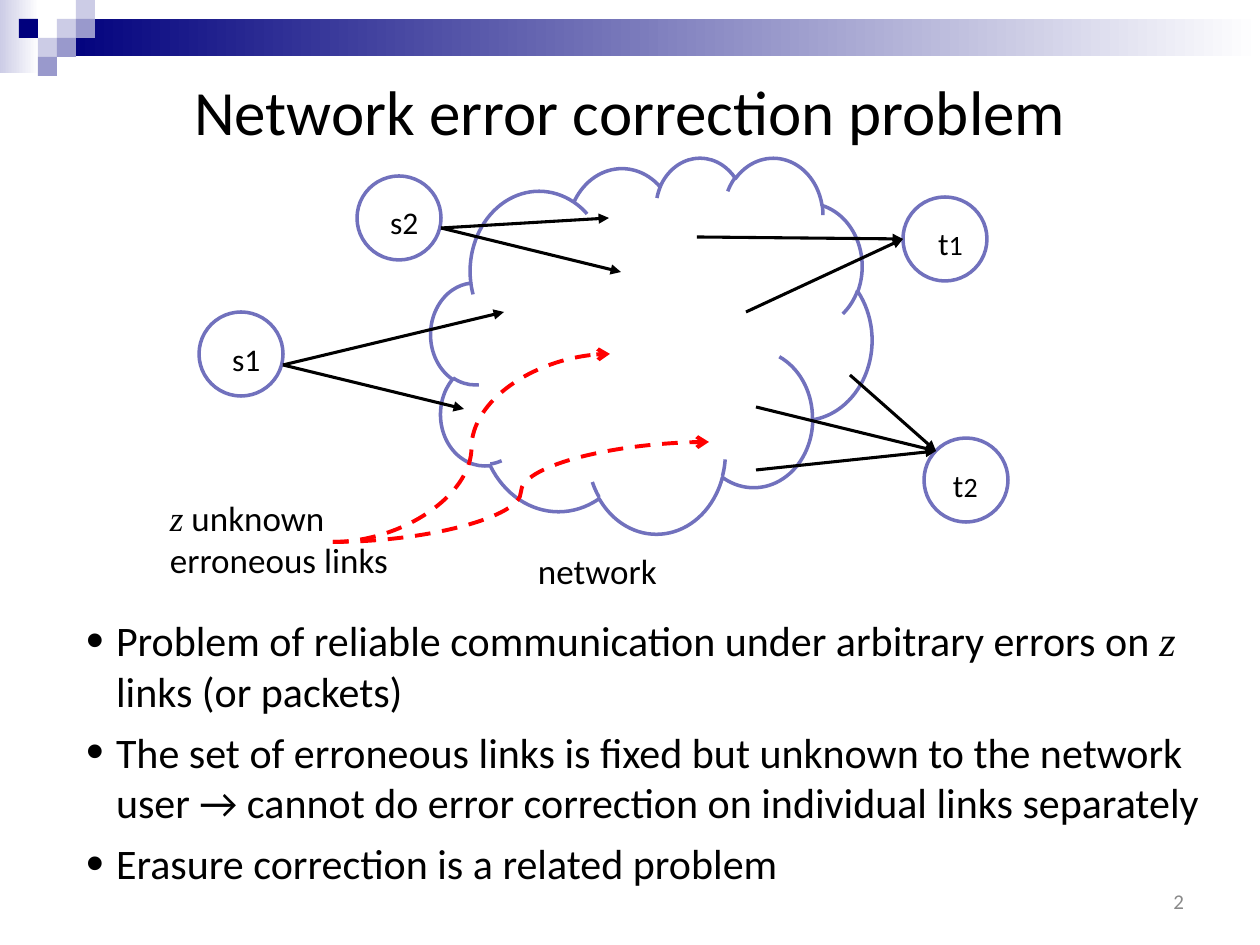
from typing import NamedTuple

from lxml.etree import SubElement
from pptx import Presentation
from pptx.dml.color import RGBColor
from pptx.enum.dml import MSO_LINE
from pptx.enum.shapes import MSO_CONNECTOR as Conn, MSO_SHAPE as Shape
from pptx.enum.text import MSO_ANCHOR as Anchor, PP_ALIGN as Align
from pptx.oxml.ns import qn
from pptx.util import Emu, Pt

PX = 914400 / 126
NAVY, LILAC, PALE, OUTLINE = "00007D", "9999CC", "CCCCE6", "7171BD"
BLACK, WHITE, RED, GREY = "000000", "FFFFFF", "FF0000", "898989"
SANS, SERIF = "Calibri", "Times New Roman"
NODE = 84
TILE = 19


class Run(NamedTuple):
    text: str
    font: str = SANS
    italic: bool = False
    size: float | None = None


class Box(NamedTuple):
    x: int
    y: int
    w: int
    h: int


class Node(NamedTuple):
    x: int
    y: int
    runs: list[Run]
    label: Box
    inset: int = 13
    align: Align = Align.LEFT


class Arrow(NamedTuple):
    x1: int
    y1: int
    x2: int
    y2: int


Z = Run("z", SERIF, True)

# Column, row and colour of the small squares in the corner
TILES = [
    (3, 1, PALE), (4, 0, PALE), (4, 1, LILAC), (2, 2, PALE),
    (1, 1, NAVY), (3, 2, LILAC), (2, 3, LILAC),
]
NODES = [
    Node(357, 176, [Run("s2")], Box(357, 197, NODE, 50), 33),
    Node(199, 312, [Run("s1")], Box(199, 334, NODE, 50), 33),
    Node(903, 197, [Run("t"), Run("1", size=16)], Box(914, 218, 73, 50),
         align=Align.CENTER),
    Node(924, 438, [Run("t"), Run("2", size=16)], Box(935, 460, 63, 88), 18),
]
LINKS = [
    Arrow(441, 228, 609, 218), Arrow(441, 228, 621, 272),
    Arrow(283, 365, 504, 312), Arrow(283, 365, 464, 409),
    Arrow(697, 237, 903, 239), Arrow(746, 312, 903, 239),
    Arrow(850, 375, 936, 451), Arrow(756, 407, 936, 451),
    Arrow(756, 470, 936, 451),
]
ERRORS = [Arrow(333, 542, 610, 354), Arrow(333, 542, 709, 442)]
BULLETS = [
    [Run("Problem of reliable communication under arbitrary errors on "),
     Run("z ", SERIF, True), Run("links (or packets)")],
    [Run("The set of erroneous links is fixed but unknown to the network user "
         "→ cannot do error correction on individual links separately")],
    [Run("Erasure correction is a related problem")],
]


def px(n: float) -> Emu:
    return Emu(round(n * PX))


def rgb(value: str) -> RGBColor:
    return RGBColor.from_string(value)


def write(sp, paragraphs: list[list[Run]], *, size: float, color: str = BLACK,
          align: Align = Align.LEFT, anchor: Anchor = Anchor.TOP,
          inset: int = 13, bullets: bool = False) -> None:
    tf = sp.text_frame
    tf.word_wrap = True
    tf.vertical_anchor = anchor
    tf.margin_left, tf.margin_right = px(inset), px(13)
    tf.margin_top = tf.margin_bottom = px(6)
    for i, runs in enumerate(paragraphs):
        p = tf.paragraphs[0] if i == 0 else tf.add_paragraph()
        p.alignment = align
        if bullets:
            p.space_before = Pt(6)
            add_bullet(p)
        for run in runs:
            r = p.add_run()
            r.text = run.text
            r.font.name = run.font
            r.font.size = Pt(run.size or size)
            r.font.italic = run.italic
            r.font.color.rgb = rgb(color)


def add_bullet(p) -> None:
    pPr = p._p.get_or_add_pPr()
    pPr.set("marL", str(px(30)))
    pPr.set("indent", str(-px(30)))
    SubElement(pPr, qn("a:buSzPct"), val="120000")
    SubElement(pPr, qn("a:buFont"), typeface="Arial")
    SubElement(pPr, qn("a:buChar"), char="•")


def add_text(s, box: Box, paragraphs: list[list[Run]], **fmt) -> None:
    write(s.shapes.add_textbox(*map(px, box)), paragraphs, **fmt)


def add_shape(s, kind: Shape, box: Box):
    sp = s.shapes.add_shape(kind, *map(px, box))
    sp.shadow.inherit = False
    return sp


def add_tile(s, box: Box, color: str, fade: bool = False) -> None:
    sp = add_shape(s, Shape.RECTANGLE, box)
    sp.line.fill.background()
    if not fade:
        sp.fill.solid()
        sp.fill.fore_color.rgb = rgb(color)
        return
    sp.fill.gradient()
    sp.fill.gradient_angle = 0
    for stop, position, shade in zip(sp.fill.gradient_stops, (0, 1), (color, WHITE)):
        stop.position = position
        stop.color.rgb = rgb(shade)


def add_outline(s, kind: Shape, box: Box) -> None:
    sp = add_shape(s, kind, box)
    sp.fill.background()
    sp.line.color.rgb = rgb(OUTLINE)
    sp.line.width = Pt(2)


def add_arrow(s, arrow: Arrow, *, kind: Conn = Conn.STRAIGHT, color: str = BLACK,
              width: float = 1.75, head: str = "triangle", dashed: bool = False) -> None:
    cx = s.shapes.add_connector(kind, *map(px, arrow))
    cx.line.color.rgb = rgb(color)
    cx.line.width = Pt(width)
    if dashed:
        cx.line.dash_style = MSO_LINE.DASH
    SubElement(cx.line._get_or_add_ln(), qn("a:tailEnd"), type=head)
    SubElement(cx._element.spPr, qn("a:effectLst"))


def main() -> None:
    prs = Presentation()
    prs.slide_width, prs.slide_height = px(1260), px(945)
    s = prs.slides.add_slide(prs.slide_layouts[5])

    # Header band
    add_tile(s, Box(0, 0, 39, 73), PALE, fade=True)
    add_tile(s, Box(57, 19, 1203, 37), NAVY, fade=True)
    for col, row, color in TILES:
        add_tile(s, Box(col * TILE, row * TILE, TILE, TILE), color)

    # Title
    title = s.shapes.title
    title.left, title.top, title.width, title.height = map(px, Box(63, 16, 1134, 189))
    write(title, [[Run("Network error correction problem")]], size=36,
          align=Align.CENTER, anchor=Anchor.MIDDLE)

    # Network diagram
    add_outline(s, Shape.CLOUD, Box(431, 157, 441, 376))
    for node in NODES:
        add_outline(s, Shape.OVAL, Box(node.x, node.y, NODE, NODE))
        add_text(s, node.label, [node.runs], size=18, inset=node.inset, align=node.align)
    for link in LINKS:
        add_arrow(s, link)
    for error in ERRORS:
        add_arrow(s, error, kind=Conn.CURVE, color=RED, width=2.25, head="arrow", dashed=True)

    # Captions, bullets and page number
    add_text(s, Box(157, 491, 262, 98), [[Z, Run(" unknown erroneous links")]], size=20)
    add_text(s, Box(525, 543, 262, 55), [[Run("network")]], size=20)
    add_text(s, Box(73, 609, 1142, 289), BULLETS, size=24, bullets=True)
    add_text(s, Box(903, 876, 294, 50), [[Run("2")]], size=12, color=GREY,
             align=Align.RIGHT, anchor=Anchor.MIDDLE)

    prs.save("out.pptx")


if __name__ == "__main__":
    main()
